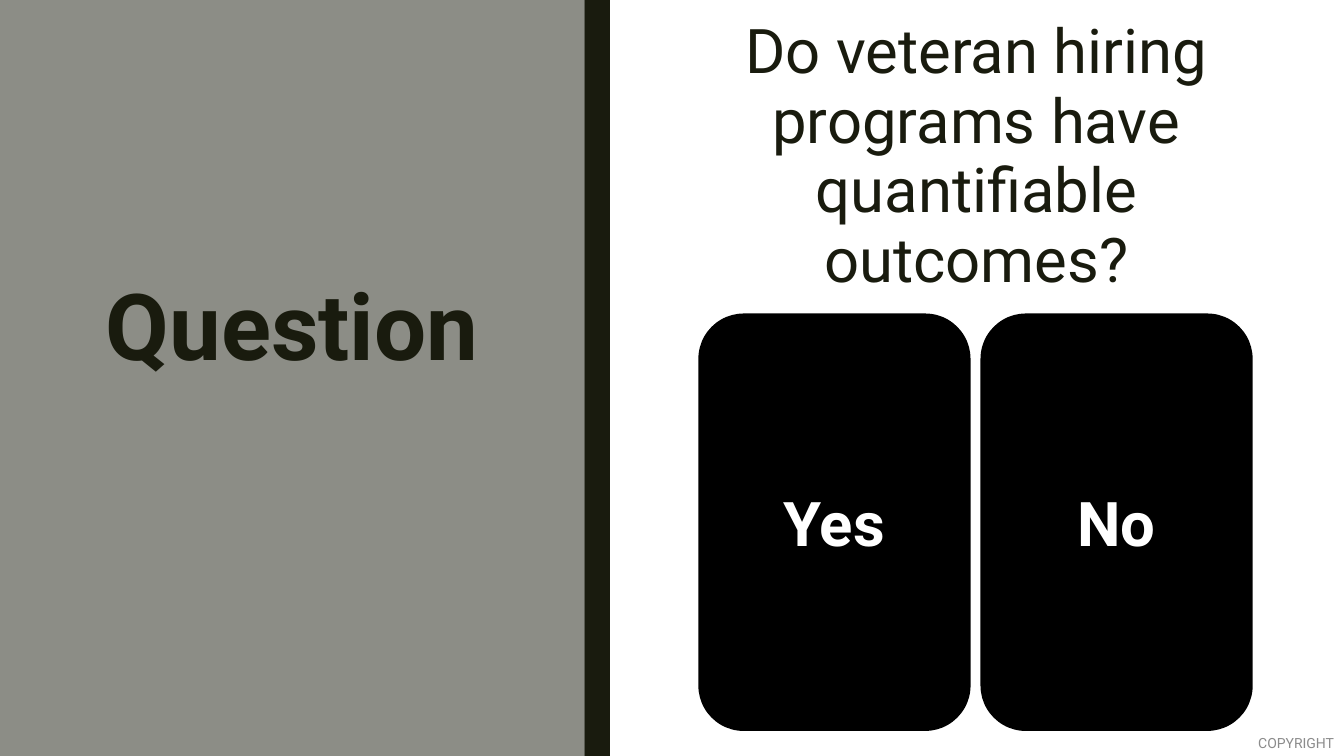
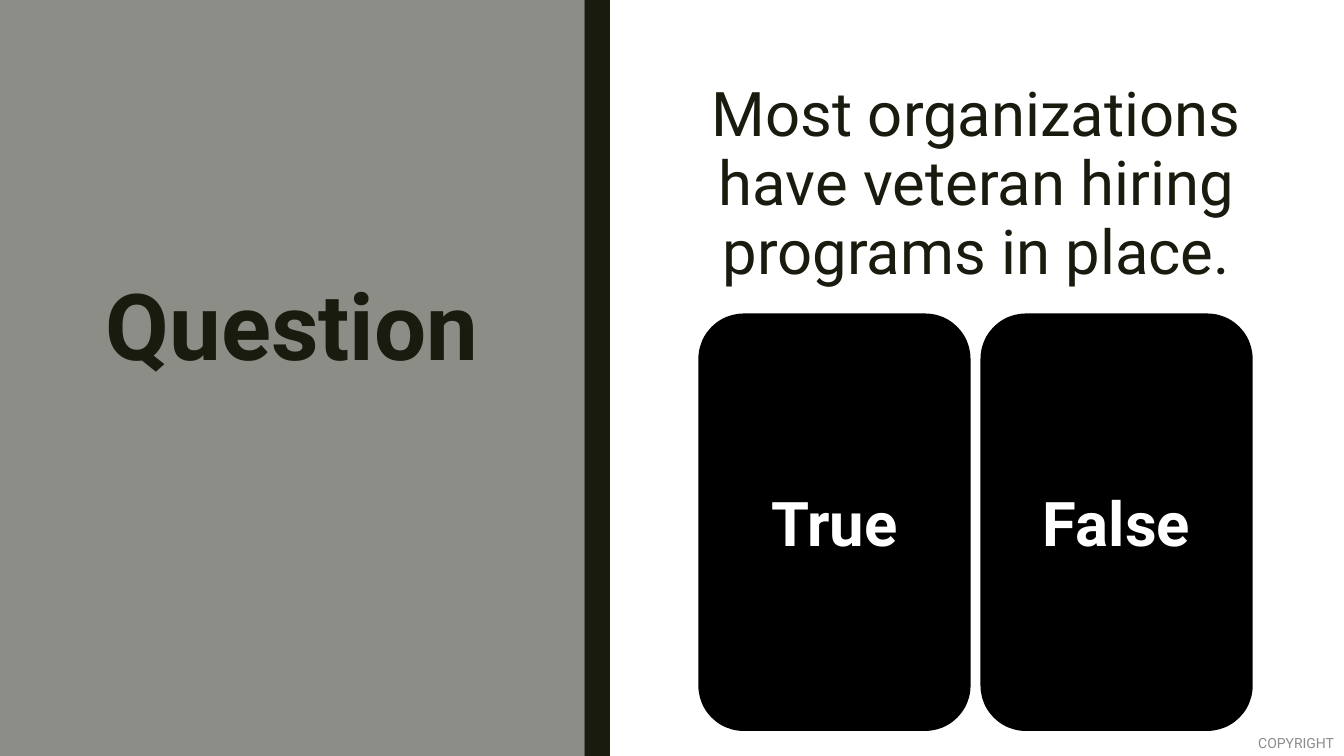
"""Build two audience question slides with a pair of answer cards each."""
from lxml import etree
from pptx import Presentation
from pptx import util as u
from pptx.dml.color import RGBColor
from pptx.enum import shapes, text
from pptx.oxml import ns

INK = RGBColor(0x19, 0x1B, 0x0E)
PANEL = RGBColor(0x8C, 0x8D, 0x86)
CARD = RGBColor(0x00, 0x00, 0x00)
WHITE = RGBColor(0xFF, 0xFF, 0xFF)
FOOTER = RGBColor(0x8C, 0x8C, 0x8C)
FONT = "Roboto"

WIDTH, HEIGHT = 33.87, 19.05
PANEL_WIDTH, BAR_WIDTH = 14.73, 0.64
CARD_LEFT, CARD_TOP, CARD_WIDTH, CARD_HEIGHT, CARD_GAP = 17.6, 7.9, 6.86, 10.52, 0.25

QUESTIONS = [
    ("Do veteran hiring programs have quantifiable outcomes?", 0.33, 7.34, ("Yes", "No")),
    ("Most organizations have veteran hiring programs in place.", 1.9, 6.48, ("True", "False")),
]


def add_block(slide, kind, left, top, width, height, color):
    shape = slide.shapes.add_shape(kind, u.Cm(left), u.Cm(top), u.Cm(width), u.Cm(height))
    shape.shadow.inherit = False
    shape.fill.solid()
    shape.fill.fore_color.rgb = color
    shape.line.fill.background()
    return shape


def write(shape, words, size, color, bold=False, align=text.PP_ALIGN.CENTER,
          anchor=text.MSO_ANCHOR.MIDDLE, spacing=1.0):
    frame = shape.text_frame
    frame.word_wrap = True
    frame.auto_size = text.MSO_AUTO_SIZE.NONE
    frame.vertical_anchor = anchor
    paragraph = frame.paragraphs[0]
    paragraph.alignment = align
    paragraph.line_spacing = spacing
    paragraph.space_before = u.Pt(0)
    run = paragraph.add_run()
    run.text = words
    run.font.name = FONT
    run.font.size = u.Pt(size)
    run.font.bold = bold
    run.font.color.rgb = color
    return paragraph


presentation = Presentation()
presentation.slide_width = u.Cm(WIDTH)
presentation.slide_height = u.Cm(HEIGHT)
layout = presentation.slide_layouts[1]
slides = [presentation.slides.add_slide(layout) for question in QUESTIONS]

bands = [(0, PANEL_WIDTH, PANEL), (PANEL_WIDTH, BAR_WIDTH, INK)]
for left, width, color in bands:
    band = add_block(slides[0], shapes.MSO_SHAPE.RECTANGLE, left, 0, width, HEIGHT, color)
    layout.shapes.element.append(band.element)

for slide, (question, top, height, answers) in zip(slides, QUESTIONS):
    title = slide.shapes.title
    title.left, title.top, title.width, title.height = u.Cm(2), u.Cm(5.38), u.Cm(10.72), u.Cm(6)
    write(title, "Question", 66, INK, bold=True, spacing=0.84)

    body = slide.placeholders[1]
    body.left, body.top, body.width, body.height = u.Cm(17.37), u.Cm(top), u.Cm(14.48), u.Cm(height)
    paragraph = write(body, question, 44, INK, anchor=text.MSO_ANCHOR.TOP, spacing=0.94)
    paragraph.space_after = u.Pt(2)
    properties = paragraph._p.get_or_add_pPr()
    properties.set("marL", "0")
    properties.set("indent", "0")
    etree.SubElement(properties, ns.qn("a:buNone"))

    for index, answer in enumerate(answers):
        left = CARD_LEFT + index * (CARD_WIDTH + CARD_GAP)
        card = add_block(slide, shapes.MSO_SHAPE.ROUNDED_RECTANGLE, left, CARD_TOP,
                         CARD_WIDTH, CARD_HEIGHT, CARD)
        write(card, answer, 44, WHITE, bold=True)

    footer = slide.shapes.add_textbox(u.Cm(31.07), u.Cm(18.4), u.Cm(2.8), u.Cm(0.65))
    footer.text_frame.margin_top = footer.text_frame.margin_bottom = 0
    write(footer, "COPYRIGHT", 10, FOOTER, align=text.PP_ALIGN.RIGHT)

presentation.save("out.pptx")
